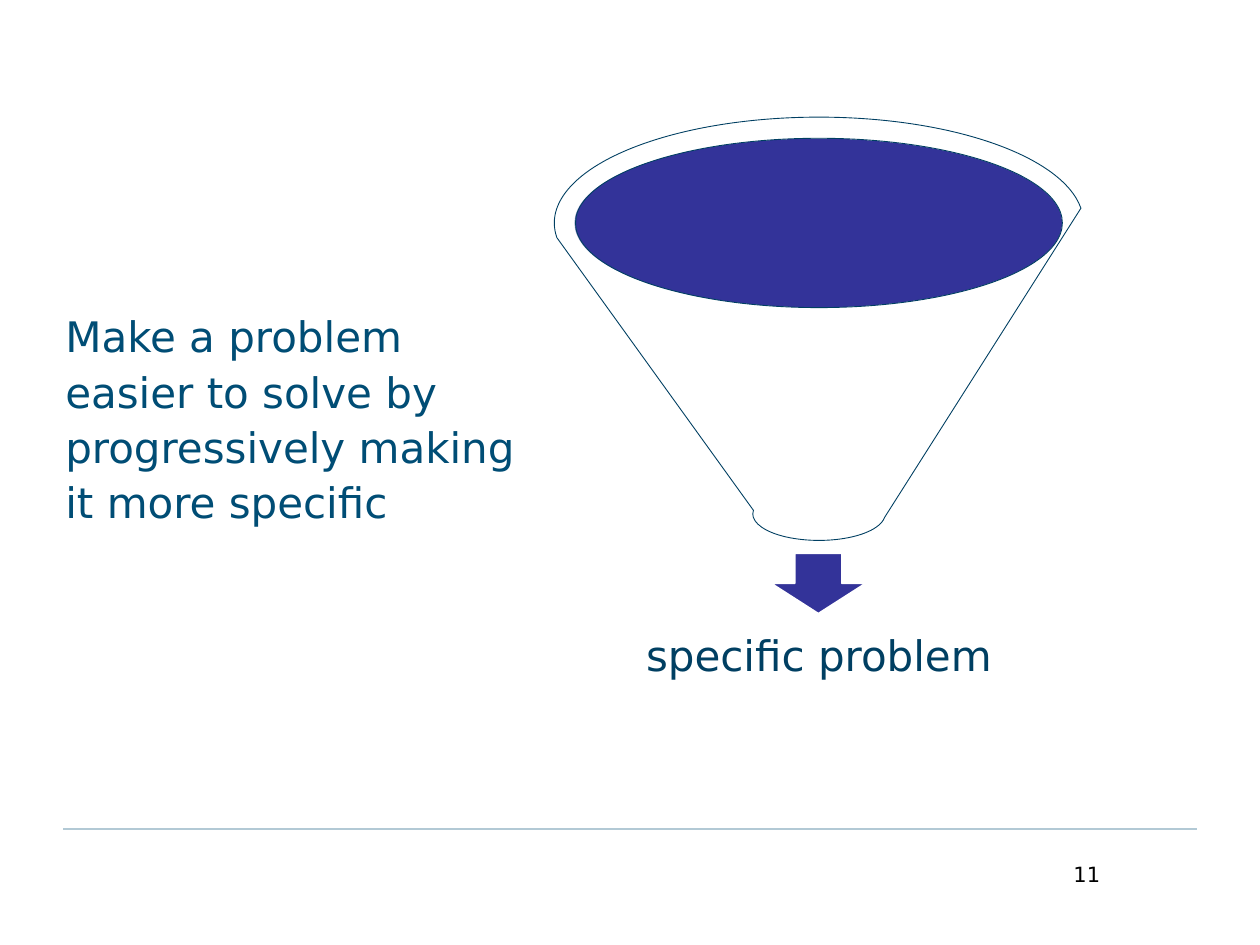
import pptx
import pptx.dml.color
import pptx.enum.shapes
import pptx.enum.text
import pptx.oxml.ns
import pptx.util
from lxml import etree
from pptx.util import Inches

RGBColor = pptx.dml.color.RGBColor
Shape = pptx.enum.shapes.MSO_SHAPE
Align = pptx.enum.text.PP_ALIGN
Anchor = pptx.enum.text.MSO_ANCHOR

WHITE = RGBColor(0xFF, 0xFF, 0xFF)
BLACK = RGBColor(0x00, 0x00, 0x00)
INDIGO = RGBColor(0x33, 0x33, 0x99)
NAVY = RGBColor(0x00, 0x3F, 0x62)
BLUE = RGBColor(0x00, 0x4D, 0x75)
PALE_BLUE = RGBColor(0xB2, 0xC9, 0xD5)
FONT = "DejaVu Sans"


def add_text(slide, text, left, top, width, height, size=24, color=NAVY,
             align=Align.LEFT, anchor=Anchor.TOP, spacing=1.0, side=0.1, edge=0.05):
    """Add a wrapped text box with one formatted paragraph."""
    box = slide.shapes.add_textbox(Inches(left), Inches(top), Inches(width), Inches(height))
    frame = box.text_frame
    frame.word_wrap = True
    frame.vertical_anchor = anchor
    frame.margin_left = frame.margin_right = Inches(side)
    frame.margin_top = frame.margin_bottom = Inches(edge)
    paragraph = frame.paragraphs[0]
    paragraph.alignment = align
    paragraph.line_spacing = spacing
    run = paragraph.add_run()
    run.text = text
    run.font.name = FONT
    run.font.size = pptx.util.Pt(size)
    run.font.color.rgb = color


def add_preset(slide, kind, left, top, width, height, fill, line=None, weight=1, opacity=None):
    """Add a flat preset shape, optionally outlined or partly transparent."""
    shape = slide.shapes.add_shape(kind, Inches(left), Inches(top), Inches(width), Inches(height))
    shape.shadow.inherit = False
    shape.fill.solid()
    shape.fill.fore_color.rgb = fill
    if line is None:
        shape.line.fill.background()
    else:
        shape.line.color.rgb = line
        shape.line.width = pptx.util.Pt(weight)
    if opacity is not None:
        color = shape.fill._xPr.find(".//" + pptx.oxml.ns.qn("a:srgbClr"))
        alpha = etree.SubElement(color, pptx.oxml.ns.qn("a:alpha"))
        alpha.set("val", str(opacity * 1000))


def add_rule(slide, left, right, top, color, weight):
    """Add a horizontal line without a shadow."""
    rule = slide.shapes.add_connector(pptx.enum.shapes.MSO_CONNECTOR.STRAIGHT,
                                      Inches(left), Inches(top), Inches(right), Inches(top))
    rule.line.color.rgb = color
    rule.line.width = pptx.util.Pt(weight)
    etree.SubElement(rule._element.spPr, pptx.oxml.ns.qn("a:effectLst"))


def add_funnel(slide):
    """Add the funnel with its opening, outlet arrow and result label."""
    add_preset(slide, Shape.OVAL, 4.56, 1.1, 3.87, 1.34, INDIGO)
    add_preset(slide, Shape.DOWN_ARROW, 6.12, 4.39, 0.75, 0.48, INDIGO, WHITE, 1)
    add_text(slide, "specific problem", 4.7, 4.77, 3.6, 0.9, align=Align.CENTER,
             anchor=Anchor.MIDDLE, spacing=0.9, side=0.19, edge=0.19)
    add_preset(slide, Shape.FUNNEL, 4.4, 0.93, 4.2, 3.36, WHITE, NAVY, 0.5, opacity=40)


def main():
    """Build and save the slide."""
    presentation = pptx.Presentation()
    presentation.slide_width = Inches(10)
    presentation.slide_height = Inches(7.5)
    slide = presentation.slides.add_slide(presentation.slide_layouts[6])
    add_rule(slide, 0.5, 9.5, 6.58, PALE_BLUE, 1.25)
    add_text(slide, "Make a problem easier to solve by progressively making it more specific",
             0.42, 0.42, 3.85, 5.77, color=BLUE, anchor=Anchor.MIDDLE, spacing=1.1)
    add_text(slide, "11", 6.5, 6.79, 2.33, 0.52, size=12, color=BLACK, align=Align.RIGHT)
    add_funnel(slide)
    presentation.save("out.pptx")


if __name__ == "__main__":
    main()
